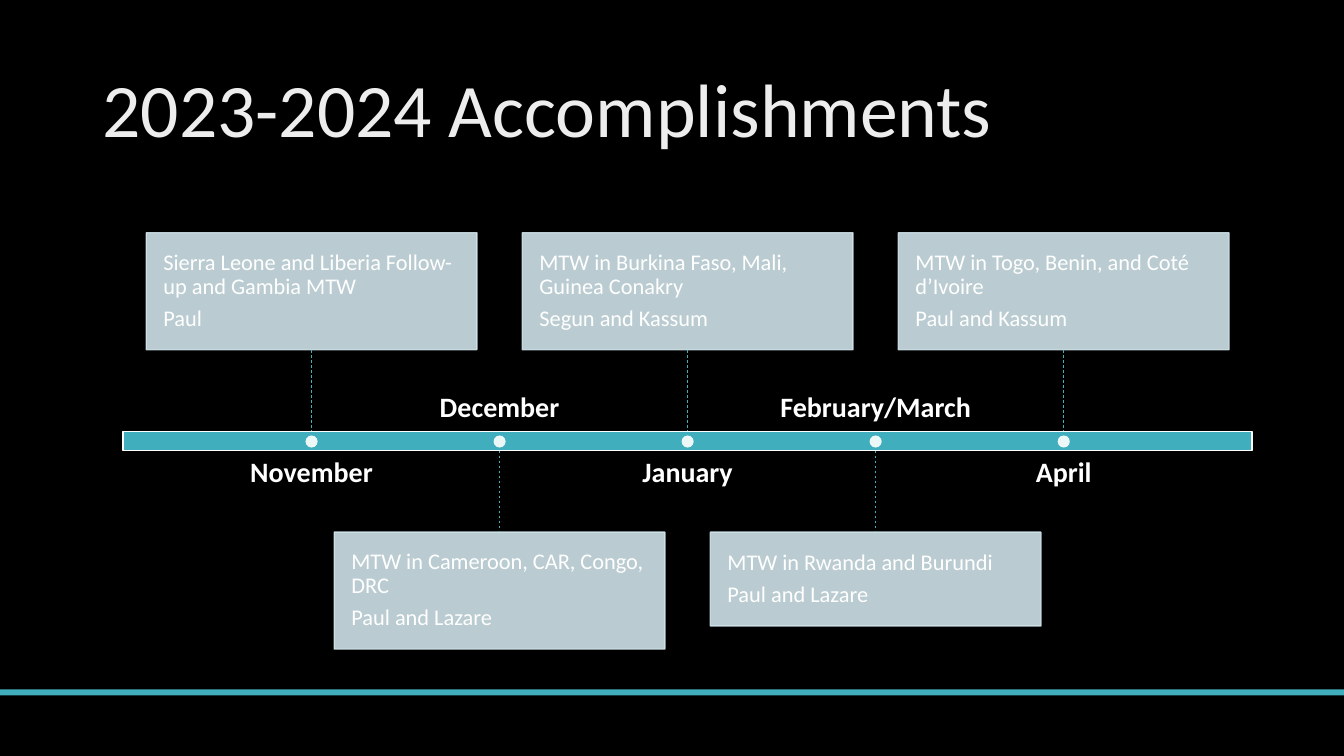
from lxml import etree
from pptx import Presentation
from pptx.dml.color import RGBColor
from pptx.enum import dml, shapes, text
from pptx.oxml.ns import qn
from pptx.util import Inches, Pt

BLACK = RGBColor(0x00, 0x00, 0x00)
WHITE = RGBColor(0xFF, 0xFF, 0xFF)
OFF_WHITE = RGBColor(0xED, 0xED, 0xED)
TEAL = RGBColor(0x41, 0xAE, 0xBD)
PALE_BLUE = RGBColor(0xCF, 0xE3, 0xE8)

TOP, BOTTOM = 0, 2  # connection sites of a rectangle
MIDDLE = text.MSO_ANCHOR.MIDDLE

prs = Presentation()
prs.slide_width, prs.slide_height = Inches(13.33), Inches(7.5)
s = prs.slides.add_slide(prs.slide_layouts[6])
s.background.fill.solid()
s.background.fill.fore_color.rgb = BLACK


def add_text(sp, lines, size, color=WHITE, bold=False, anchor=MIDDLE,
             align=text.PP_ALIGN.LEFT, inset=0.0, after=0.0):
    tf = sp.text_frame
    tf.word_wrap = True
    tf.vertical_anchor = anchor
    tf.margin_left = tf.margin_right = Inches(inset)
    tf.margin_top = tf.margin_bottom = Inches(inset)
    for n, line in enumerate(lines):
        p = tf.paragraphs[0] if n == 0 else tf.add_paragraph()
        p.alignment = align
        p.line_spacing = 0.9
        p.space_after = Pt(after)
        r = p.add_run()
        r.text = line
        r.font.name = "Calibri"
        r.font.size = Pt(size)
        r.font.bold = bold
        r.font.color.rgb = color


def add_block(kind, left, top, width, height, fill, line=None, alpha=100):
    sp = s.shapes.add_shape(kind, Inches(left), Inches(top), Inches(width), Inches(height))
    sp.shadow.inherit = False
    sp.fill.solid()
    sp.fill.fore_color.rgb = fill
    if line is None:
        sp.line.fill.background()
    else:
        sp.line.color.rgb = line
        sp.line.width = Pt(1)
    if alpha < 100:
        for clr in sp._element.spPr.iter(qn("a:srgbClr")):
            etree.SubElement(clr, qn("a:alpha"), val=str(alpha * 1000))
    return sp


RECT, OVAL = shapes.MSO_SHAPE.RECTANGLE, shapes.MSO_SHAPE.OVAL

# Footer stripe and title
add_block(RECT, 0, 6.84, 13.33, 0.06, TEAL)
title = s.shapes.add_textbox(Inches(0.92), Inches(0.4), Inches(11.5), Inches(1.45))
add_text(title, ["2023-2024 Accomplishments"], 54, color=OFF_WHITE, inset=0.1)

# Timeline bar
bar_top, bar_h = 4.28, 0.19
bar = add_block(RECT, 1.22, bar_top, 11.2, bar_h, TEAL, line=WHITE)

# Milestones: month, card text, card height; cards alternate above and below
milestones = [
    ("November", ["Sierra Leone and Liberia Follow-up and Gambia MTW", "Paul"], 1.16),
    ("December", ["MTW in Cameroon, CAR, Congo, DRC", "Paul and Lazare"], 1.16),
    ("January", ["MTW in Burkina Faso, Mali, Guinea Conakry", "Segun and Kassum"], 1.16),
    ("February/March", ["MTW in Rwanda and Burundi", "Paul and Lazare"], 0.93),
    ("April", ["MTW in Togo, Benin, and Coté d’Ivoire", "Paul and Kassum"], 1.16),
]
first_x, step = 3.09, 1.865
card_w, label_w, label_h, dot = 3.28, 2.98, 0.54, 0.12

for i, (month, lines, card_h) in enumerate(milestones):
    x = first_x + i * step
    above = i % 2 == 0

    # Month label on the side opposite the card
    label = s.shapes.add_textbox(Inches(x - label_w / 2), Inches(4.55 if above else 3.66),
                                 Inches(label_w), Inches(label_h))
    add_text(label, [month], 20, bold=True, align=text.PP_ALIGN.CENTER, after=7,
             anchor=text.MSO_ANCHOR.TOP if above else text.MSO_ANCHOR.BOTTOM)

    # Card
    card_top = 2.31 if above else 5.28
    card = add_block(RECT, x - card_w / 2, card_top, card_w, card_h,
                     PALE_BLUE, line=PALE_BLUE, alpha=90)
    add_text(card, lines, 16, inset=0.17, after=5.6)

    # Dashed line between card and bar
    start, end = (card_top + card_h, bar_top) if above else (bar_top + bar_h, card_top)
    link = s.shapes.add_connector(shapes.MSO_CONNECTOR.STRAIGHT,
                                  Inches(x), Inches(start), Inches(x), Inches(end))
    link.line.color.rgb = TEAL
    link.line.width = Pt(0.5)
    link.line.dash_style = dml.MSO_LINE.DASH
    etree.SubElement(link._element.spPr, qn("a:effectLst"))
    if above:
        link.begin_connect(card, BOTTOM)
    else:
        link.end_connect(card, TOP)
    if i == len(milestones) // 2:
        link.end_connect(bar, TOP)

    # Dot on the bar
    add_block(OVAL, x - dot / 2, 4.32, dot, dot, WHITE, alpha=90)

prs.save("out.pptx")
